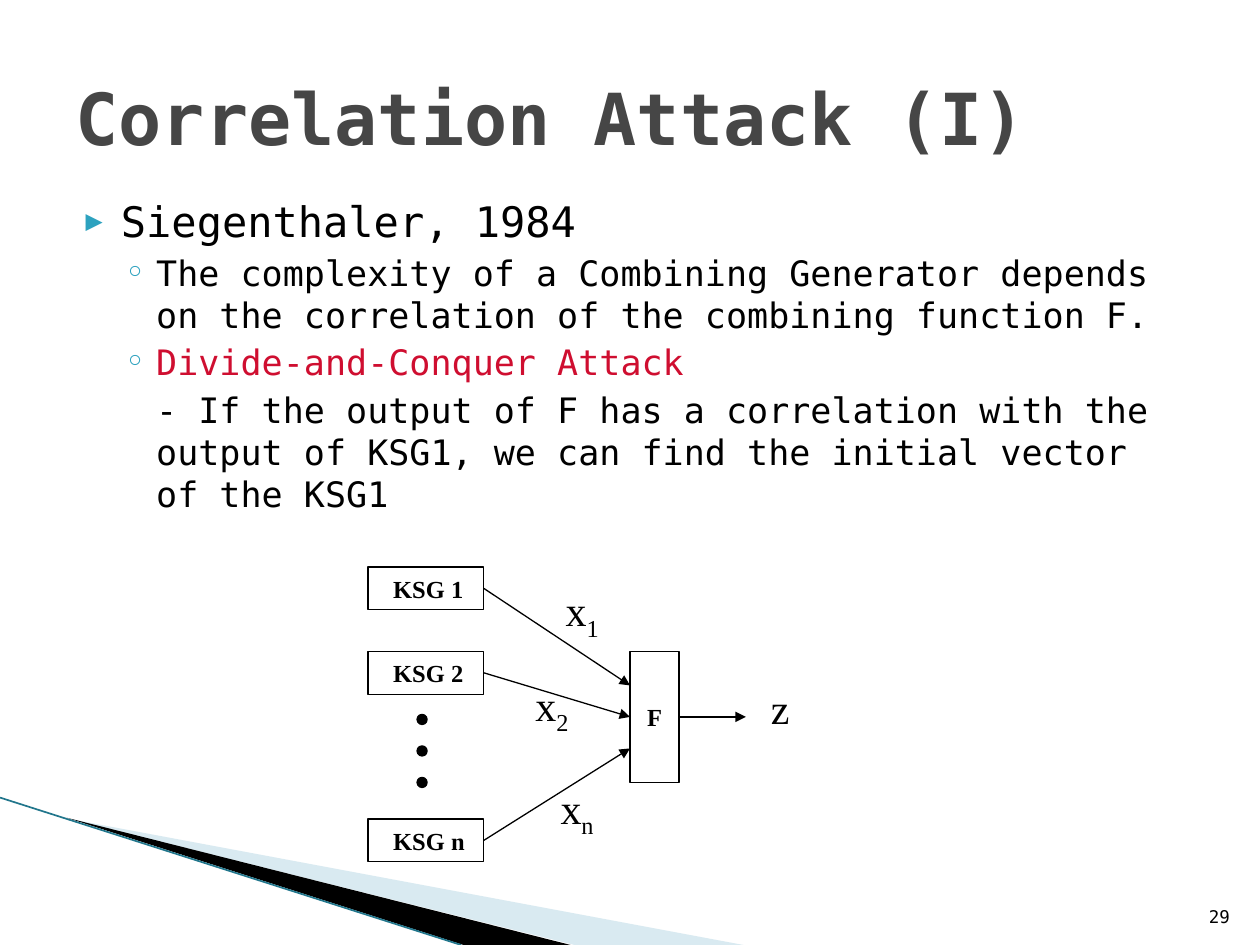
import pptx
import pptx.util
import pptx.dml.color
import pptx.enum.shapes
import pptx.enum.text
import pptx.oxml
from lxml import etree
from pptx.util import Inches, Pt

SHAPE = pptx.enum.shapes.MSO_SHAPE
ALIGN = pptx.enum.text.PP_ALIGN
ANCHOR = pptx.enum.text.MSO_ANCHOR
AUTO_SIZE = pptx.enum.text.MSO_AUTO_SIZE

MONO, SERIF = "DejaVu Sans Mono", "Times New Roman"
BLACK, GREY, RED, ACCENT = "000000", "464646", "CF0E30", "2DA2BF"

TITLE = "Correlation Attack (I)"
PAGE = "29"
# text, level, bullet, bullet size in %, text size, colour
POINTS = [
    ("Siegenthaler, 1984", 0, "▶", 68, 24, BLACK),
    ("The complexity of a Combining Generator depends on the correlation "
     "of the combining function F.", 1, "◦", 100, 20, BLACK),
    ("Divide-and-Conquer Attack", 1, "◦", 100, 20, RED),
    ("- If the output of F has a correlation with the output of KSG1, "
     "we can find the initial vector of the KSG1", 1, None, 100, 20, BLACK),
]
# left margin, hanging indent, space before
LEVELS = [(0.4, -0.28, 4), (0.68, -0.25, 3.2)]
# box text, box top, subscript of x, label left, label top
GENERATORS = [
    ("KSG 1", 4.5, "1", 4.39, 4.59),
    ("KSG 2", 5.17, "2", 4.15, 5.34),
    ("KSG n", 6.5, "n", 4.35, 6.16),
]
KSG_LEFT, KSG_WIDTH, KSG_HEIGHT = 2.92, 0.92, 0.34
F_LEFT, F_TOP, F_WIDTH, F_HEIGHT = 5, 5.17, 0.39, 1.04
F_MIDDLE = F_TOP + F_HEIGHT / 2
INPUT_GAP = 0.25
# outline points, colour, opacity in %
SWOOSHES = [
    ([(0.55, 6.5), (5.9, 7.5), (4.56, 7.5)], "A0CBDC", 40),
    ([(0.53, 6.49), (4.53, 7.5), (3.68, 7.5)], BLACK, 100),
]


def rgb(colour):
    return pptx.dml.color.RGBColor.from_string(colour)


def add_element(parent, tag, **attributes):
    element = etree.SubElement(parent, pptx.oxml.ns.qn(tag))
    for key, value in attributes.items():
        element.set(key, str(value))
    return element


def add_run(paragraph, text, font, size, colour=BLACK, bold=False):
    run = paragraph.add_run()
    run.text = text
    run.font.name, run.font.size, run.font.bold = font, Pt(size), bold
    run.font.color.rgb = rgb(colour)
    return run


def place(shape, left, top, width, height):
    shape.left, shape.top = Inches(left), Inches(top)
    shape.width, shape.height = Inches(width), Inches(height)


def add_shape(slide, kind, left, top, width, height, fill=None):
    shape = slide.shapes.add_shape(kind, Inches(left), Inches(top),
                                   Inches(width), Inches(height))
    shape.shadow.inherit = False
    if fill:
        shape.fill.solid()
        shape.fill.fore_color.rgb = rgb(fill)
    else:
        shape.fill.background()
    shape.line.color.rgb = rgb(BLACK)
    shape.line.width = Pt(0.75)
    return shape


def add_block(slide, text, left, top, width, height, inset, align):
    block = add_shape(slide, SHAPE.RECTANGLE, left, top, width, height)
    frame = block.text_frame
    frame.word_wrap = False
    frame.vertical_anchor = ANCHOR.MIDDLE
    frame.margin_left = Inches(inset)
    frame.margin_right = frame.margin_top = frame.margin_bottom = 0
    frame.paragraphs[0].alignment = align
    add_run(frame.paragraphs[0], text, SERIF, 14, bold=True)
    return block


def add_line(slide, start, end, colour=BLACK, width=0.75):
    line = slide.shapes.add_connector(
        pptx.enum.shapes.MSO_CONNECTOR.STRAIGHT,
        *(Inches(value) for value in (*start, *end)))
    line.line.color.rgb = rgb(colour)
    line.line.width = Pt(width)
    add_element(line._element.spPr, "a:effectLst")
    return line


def add_arrow(slide, start, end):
    arrow = add_line(slide, start, end)
    add_element(arrow.line._get_or_add_ln(), "a:tailEnd", type="triangle")
    return arrow


def add_label(slide, left, top, width, text, subscript=""):
    label = slide.shapes.add_textbox(Inches(left), Inches(top),
                                     Inches(width), Inches(0.5))
    label.text_frame.word_wrap = False
    paragraph = label.text_frame.paragraphs[0]
    add_run(paragraph, text, SERIF, 24)
    if subscript:
        run = add_run(paragraph, subscript, SERIF, 24)
        run.font._element.set("baseline", "-25000")


def add_background(slide):
    for points, colour, opacity in SWOOSHES:
        start, *others = [(Inches(x), Inches(y)) for x, y in points]
        builder = slide.shapes.build_freeform(*start)
        builder.add_line_segments(others, close=True)
        swoosh = builder.convert_to_shape()
        swoosh.shadow.inherit = False
        swoosh.fill.solid()
        swoosh.fill.fore_color.rgb = rgb(colour)
        swoosh.line.fill.background()
        if opacity < 100:
            colour_element = swoosh._element.spPr.find(
                ".//" + pptx.oxml.ns.qn("a:srgbClr"))
            add_element(colour_element, "a:alpha", val=opacity * 1000)
    add_line(slide, (0, 6.33), (3.66, 7.5), "21768C", 0.95)


def add_text(slide):
    title, body = slide.placeholders
    place(title, 0.5, 0.3, 9, 1.25)
    title.text_frame.vertical_anchor = ANCHOR.MIDDLE
    heading = title.text_frame.paragraphs[0]
    heading.alignment = ALIGN.LEFT
    add_run(heading, TITLE, MONO, 41, GREY, bold=True)

    place(body, 0.46, 1.5, 9.08, 2.7)
    frame = body.text_frame
    frame.auto_size = AUTO_SIZE.NONE
    for index, (text, level, bullet, percent, size, colour) in enumerate(POINTS):
        paragraph = frame.add_paragraph() if index else frame.paragraphs[0]
        margin, hanging, before = LEVELS[level]
        paragraph.level = level
        properties = paragraph._p.get_or_add_pPr()
        properties.set("marL", str(Inches(margin)))
        properties.set("indent", str(Inches(hanging if bullet else 0)))
        if bullet:
            bullet_colour = add_element(properties, "a:buClr")
            add_element(bullet_colour, "a:srgbClr", val=ACCENT)
            add_element(properties, "a:buSzPct", val=percent * 1000)
            add_element(properties, "a:buFont", typeface=MONO)
            add_element(properties, "a:buChar", char=bullet)
        else:
            add_element(properties, "a:buNone")
        paragraph.space_before = Pt(before if index else 0)
        add_run(paragraph, text, MONO, size, colour)

    number = slide.shapes.add_textbox(Inches(9.46), Inches(7.01),
                                      Inches(0.4), Inches(0.4))
    number.text_frame.word_wrap = True
    number.text_frame.vertical_anchor = ANCHOR.BOTTOM
    number.text_frame.paragraphs[0].alignment = ALIGN.RIGHT
    add_run(number.text_frame.paragraphs[0], PAGE, MONO, 10)


def add_diagram(slide):
    combiner = add_block(slide, "F", F_LEFT, F_TOP, F_WIDTH, F_HEIGHT,
                         0, ALIGN.CENTER)
    for index, (name, top, subscript, x, y) in enumerate(GENERATORS):
        generator = add_block(slide, name, KSG_LEFT, top, KSG_WIDTH,
                              KSG_HEIGHT, 0.2, ALIGN.LEFT)
        start = (KSG_LEFT + KSG_WIDTH, top + KSG_HEIGHT / 2)
        end = (F_LEFT, F_MIDDLE + (index - 1) * INPUT_GAP)
        arrow = add_arrow(slide, start, end)
        arrow.begin_connect(generator, 3)
        if index == 1:
            arrow.end_connect(combiner, 1)
        add_label(slide, x, y, 0.48, "x", subscript)
    for step in range(3):
        add_shape(slide, SHAPE.OVAL, 3.31, 5.67 + step * 0.25, 0.08, 0.08, BLACK)
    output = add_arrow(slide, (F_LEFT + F_WIDTH, F_MIDDLE), (5.92, F_MIDDLE))
    output.begin_connect(combiner, 3)
    add_label(slide, 6.02, 5.37, 0.35, "z")


def main():
    deck = pptx.Presentation()
    deck.slide_width, deck.slide_height = Inches(10), Inches(7.5)
    slide = deck.slides.add_slide(deck.slide_layouts[1])
    add_background(slide)
    add_text(slide)
    add_diagram(slide)
    deck.save("out.pptx")


if __name__ == "__main__":
    main()
